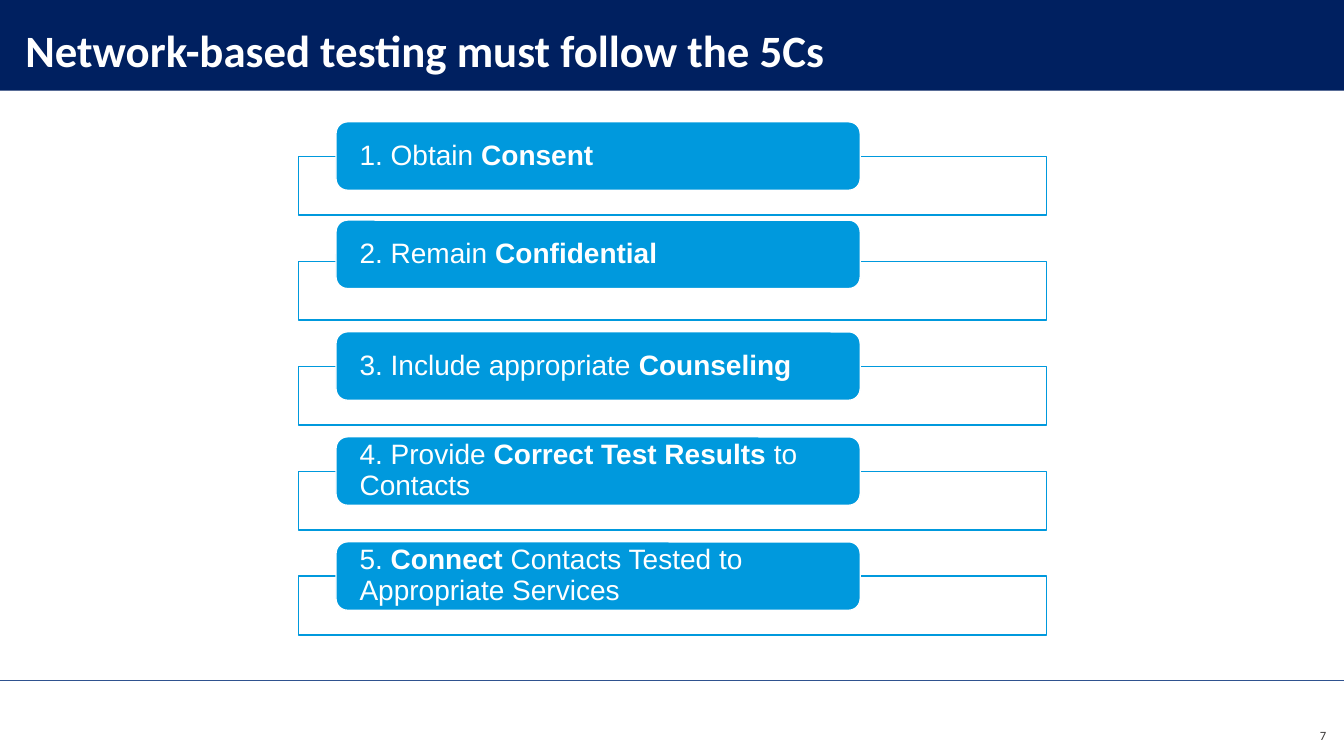
from lxml.etree import SubElement as Sub
from pptx import Presentation
from pptx.dml.color import RGBColor
from pptx.enum.shapes import MSO_CONNECTOR as Conn, MSO_SHAPE as Shape
from pptx.enum.text import MSO_ANCHOR as Anchor, PP_ALIGN as Align
from pptx.oxml.ns import qn
from pptx.util import Inches, Pt

NAVY = RGBColor(0x00, 0x20, 0x60)
BLUE = RGBColor(0x00, 0x99, 0xDD)
RULE = RGBColor(0x2F, 0x52, 0x8F)
GREY = RGBColor(0x3B, 0x38, 0x38)
WHITE = RGBColor(0xFF, 0xFF, 0xFF)

WIDE, HIGH = Inches(13.33), Inches(7.5)
COL, ROW = WIDE / 36, HIGH / 36
STEP = 5
STEPS = [
    (0, [("1. Obtain ", False), ("Consent", True)]),
    (-0.32, [("2. Remain ", False), ("Confidential", True)]),
    (0, [("3. Include appropriate ", False), ("Counseling", True)]),
    (0, [("4. Provide ", False), ("Correct Test Results ", True),
         ("to Contacts", False)]),
    (0, [("5. ", False), ("Connect", True),
         (" Contacts Tested to Appropriate Services", False)]),
]


def cells(col, row, cols, rows):
    """Turn grid cells into a left, top, width and height."""
    return [round(n) for n in (col * COL, row * ROW, cols * COL, rows * ROW)]


def write(frame, runs, size, font, color, align=Align.LEFT):
    """Fill a wrapped text frame run by run."""
    frame.word_wrap = True
    para = frame.paragraphs[0]
    para.alignment = align
    for text, bold in runs:
        run = para.add_run()
        run.text = text
        run.font.name, run.font.size = font, Pt(size)
        run.font.bold, run.font.color.rgb = bold, color
    return para


def inset(frame, side):
    """Set the side margins and clear the top and bottom ones."""
    frame.margin_left = frame.margin_right = Inches(side)
    frame.margin_top = frame.margin_bottom = 0


def block(slide, kind, area, fill, line=None):
    """Add a flat filled shape with an optional outline."""
    shape = slide.shapes.add_shape(kind, *area)
    shape.shadow.inherit = False
    shape.fill.solid()
    shape.fill.fore_color.rgb = fill
    if line is None:
        shape.line.fill.background()
    else:
        shape.line.color.rgb = line
        shape.line.width = Pt(1)
    return shape


def label(slide, area, anchor):
    """Add a text box and return its frame."""
    frame = slide.shapes.add_textbox(*area).text_frame
    frame.vertical_anchor = anchor
    return frame


def rule(slide, row):
    """Draw a thin line across the slide."""
    y = round(row * ROW)
    line = slide.shapes.add_connector(Conn.STRAIGHT, 0, y, WIDE, y)
    line.line.color.rgb = RULE
    line.line.width = Pt(0.5)
    Sub(line._element.spPr, qn("a:effectLst"))


def step(slide, row, shift, runs):
    """Add one step: an outlined panel with a rounded bar over it."""
    panel = block(slide, Shape.RECTANGLE, cells(8, row + 1.64, 20.04, 2.8),
                  WHITE, BLUE)
    tint = panel._element.spPr.find(qn("a:solidFill"))[0]
    Sub(tint, qn("a:alpha"), val="90000")
    bar = block(slide, Shape.ROUNDED_RECTANGLE,
                cells(9, row + shift, 14.04, 3.26), BLUE, WHITE)
    frame = bar.text_frame
    frame.vertical_anchor = Anchor.MIDDLE
    inset(frame, 0.2)
    write(frame, runs, 20, "Arial", WHITE).line_spacing = 0.9


def main():
    """Build the slide and save it."""
    deck = Presentation()
    deck.slide_width, deck.slide_height = WIDE, HIGH
    slide = deck.slides.add_slide(deck.slide_layouts[6])

    block(slide, Shape.RECTANGLE, cells(0, 0, 36, 4.32), NAVY)
    page = label(slide, cells(34.06, 34.08, 1.73, 1.92), Anchor.MIDDLE)
    write(page, [("7", False)], 9, "Calibri", GREY, Align.RIGHT)
    rule(slide, 32.4)
    head = label(slide, cells(0.68, 1.06, 34.54, 2.6), Anchor.TOP)
    inset(head, 0)
    write(head, [("Network-based testing must follow the 5Cs", True)],
          32, "Calibri", WHITE)

    for i, (shift, runs) in enumerate(STEPS):
        step(slide, 5.8 + i * STEP, shift, runs)
    deck.save("out.pptx")


if __name__ == "__main__":
    main()
